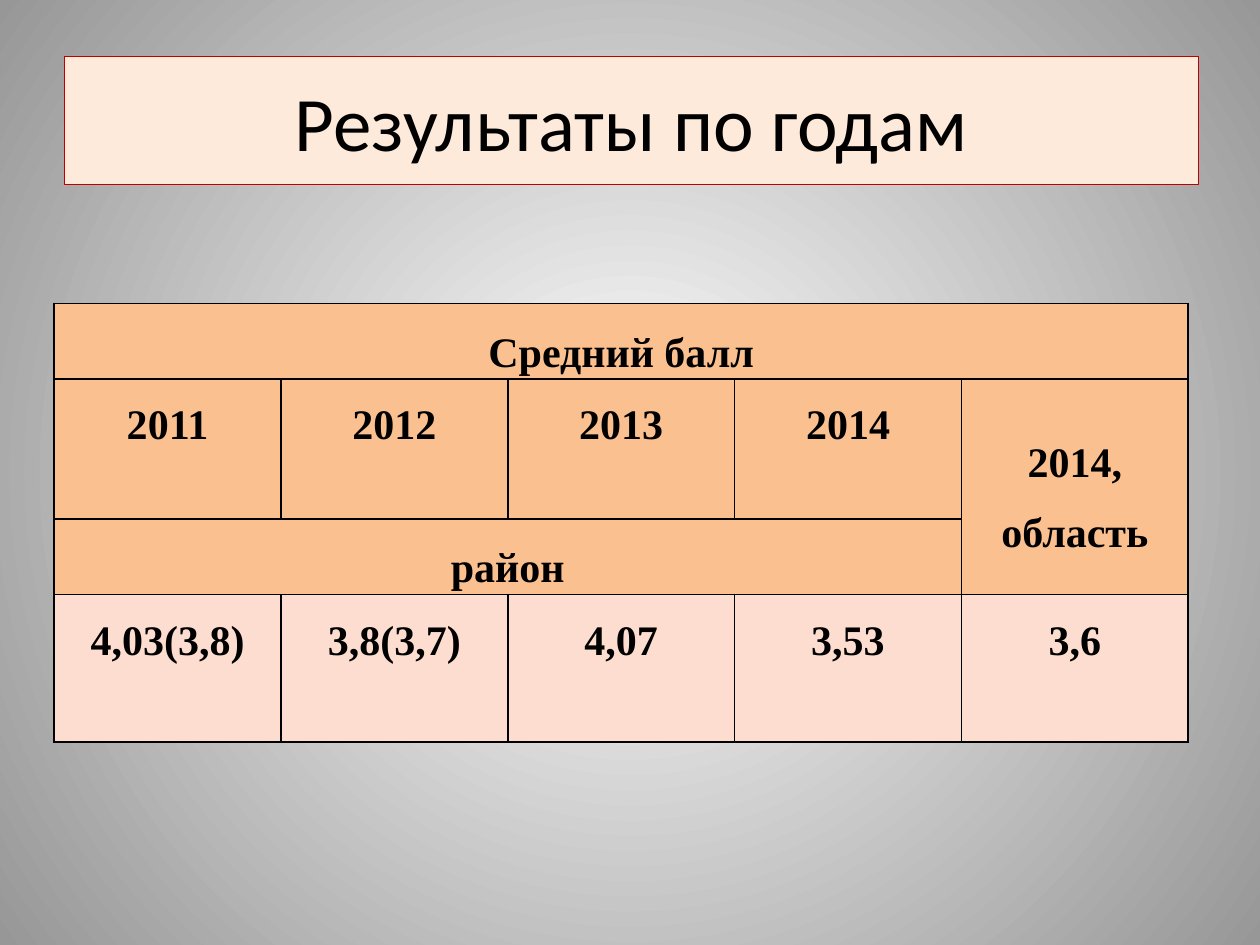
from dataclasses import dataclass

from lxml.etree import SubElement
from pptx import Presentation
from pptx.dml.color import RGBColor
from pptx.enum.text import MSO_ANCHOR, PP_ALIGN
from pptx.oxml.ns import qn
from pptx.util import Inches, Pt


@dataclass(frozen=True)
class Theme:
    center: str = "FFFFFF"
    edge: str = "979797"
    title_fill: str = "FDEADA"
    title_line: str = "C00000"
    header_fill: str = "FAC090"
    score_fill: str = "FCDDCF"
    ink: str = "000000"
    title_font: str = "Calibri"
    table_font: str = "Times New Roman"
    title_size: int = 44
    table_size: int = 24


THEME = Theme()
COLUMN_WIDTH = 1.8
ROW_HEIGHTS = [0.6, 1.11, 0.6, 1.17]
RESULTS = [
    ["Средний балл", "", "", "", ""],
    ["2011", "2012", "2013", "2014", "2014,\nобласть"],
    ["район", "", "", "", ""],
    ["4,03(3,8)", "3,8(3,7)", "4,07", "3,53", "3,6"],
]
MERGES = [((0, 0), (0, 4)), ((1, 4), (2, 4)), ((2, 0), (2, 3))]


def apply_format(target, values):
    for name, value in values.items():
        setattr(target, name, value)


def fill_solid(fill, color):
    fill.solid()
    fill.fore_color.rgb = RGBColor.from_string(color)


def format_text(text_frame, paragraph_format, font_format):
    for paragraph in text_frame.paragraphs:
        apply_format(paragraph, paragraph_format)
        apply_format(paragraph.font, font_format)
        for run in paragraph.runs:
            apply_format(run.font, font_format)
            run.font.color.rgb = RGBColor.from_string(THEME.ink)


def set_background(slide):
    """Radial gradient that spreads from the middle of the slide."""
    fill = slide.background.fill
    fill.gradient()
    for stop, color, position in zip(fill.gradient_stops, (THEME.center, THEME.edge), (0, 1)):
        stop.color.rgb = RGBColor.from_string(color)
        stop.position = position
    gradient = next(slide.element.iter(qn("a:gradFill")))
    gradient.remove(gradient.find(qn("a:lin")))
    path = SubElement(gradient, qn("a:path"), {"path": "circle"})
    SubElement(path, qn("a:fillToRect"), dict.fromkeys("ltrb", "50000"))


def add_title(slide, text):
    title = slide.shapes.title
    apply_format(title, {"left": Inches(0.51), "top": Inches(0.45),
                         "width": Inches(9), "height": Inches(1.01)})
    fill_solid(title.fill, THEME.title_fill)
    fill_solid(title.line.fill, THEME.title_line)
    title.line.width = Pt(0.25)
    title.text_frame.text = text
    title.text_frame.vertical_anchor = MSO_ANCHOR.MIDDLE
    format_text(title.text_frame, {"alignment": PP_ALIGN.CENTER},
                {"name": THEME.title_font, "size": Pt(THEME.title_size)})


def add_borders(cell):
    properties = cell._tc.get_or_add_tcPr()
    for side in ("lnL", "lnR", "lnT", "lnB"):
        line = SubElement(properties, qn(f"a:{side}"), {"w": str(Pt(1))})
        solid = SubElement(line, qn("a:solidFill"))
        SubElement(solid, qn("a:srgbClr"), {"val": THEME.ink})


def format_cell(cell, text, color):
    cell.text = text
    anchor = MSO_ANCHOR.MIDDLE if cell.is_merge_origin else MSO_ANCHOR.TOP
    apply_format(cell, {"margin_left": Inches(0.07), "margin_right": Inches(0.07),
                        "margin_top": 0, "margin_bottom": 0, "vertical_anchor": anchor})
    add_borders(cell)
    fill_solid(cell.fill, color)
    format_text(cell.text_frame, {"alignment": PP_ALIGN.CENTER, "line_spacing": 1.5},
                {"name": THEME.table_font, "size": Pt(THEME.table_size), "bold": True})


def add_results_table(slide):
    row_count, column_count = len(RESULTS), len(RESULTS[0])
    table = slide.shapes.add_table(
        row_count, column_count, Inches(0.43), Inches(2.41),
        Inches(COLUMN_WIDTH * column_count), Inches(sum(ROW_HEIGHTS))).table
    for column in table.columns:
        column.width = Inches(COLUMN_WIDTH)
    for row, height in zip(table.rows, ROW_HEIGHTS):
        row.height = Inches(height)
    for first, last in MERGES:
        table.cell(*first).merge(table.cell(*last))
    for row_index, texts in enumerate(RESULTS):
        is_score = row_index == row_count - 1
        color = THEME.score_fill if is_score else THEME.header_fill
        for column_index, text in enumerate(texts):
            format_cell(table.cell(row_index, column_index), text, color)


def main():
    presentation = Presentation()
    presentation.slide_width = Inches(10)
    presentation.slide_height = Inches(7.5)
    slide = presentation.slides.add_slide(presentation.slide_layouts[5])
    set_background(slide)
    add_title(slide, "Результаты по годам")
    add_results_table(slide)
    presentation.save("out.pptx")


if __name__ == "__main__":
    main()
